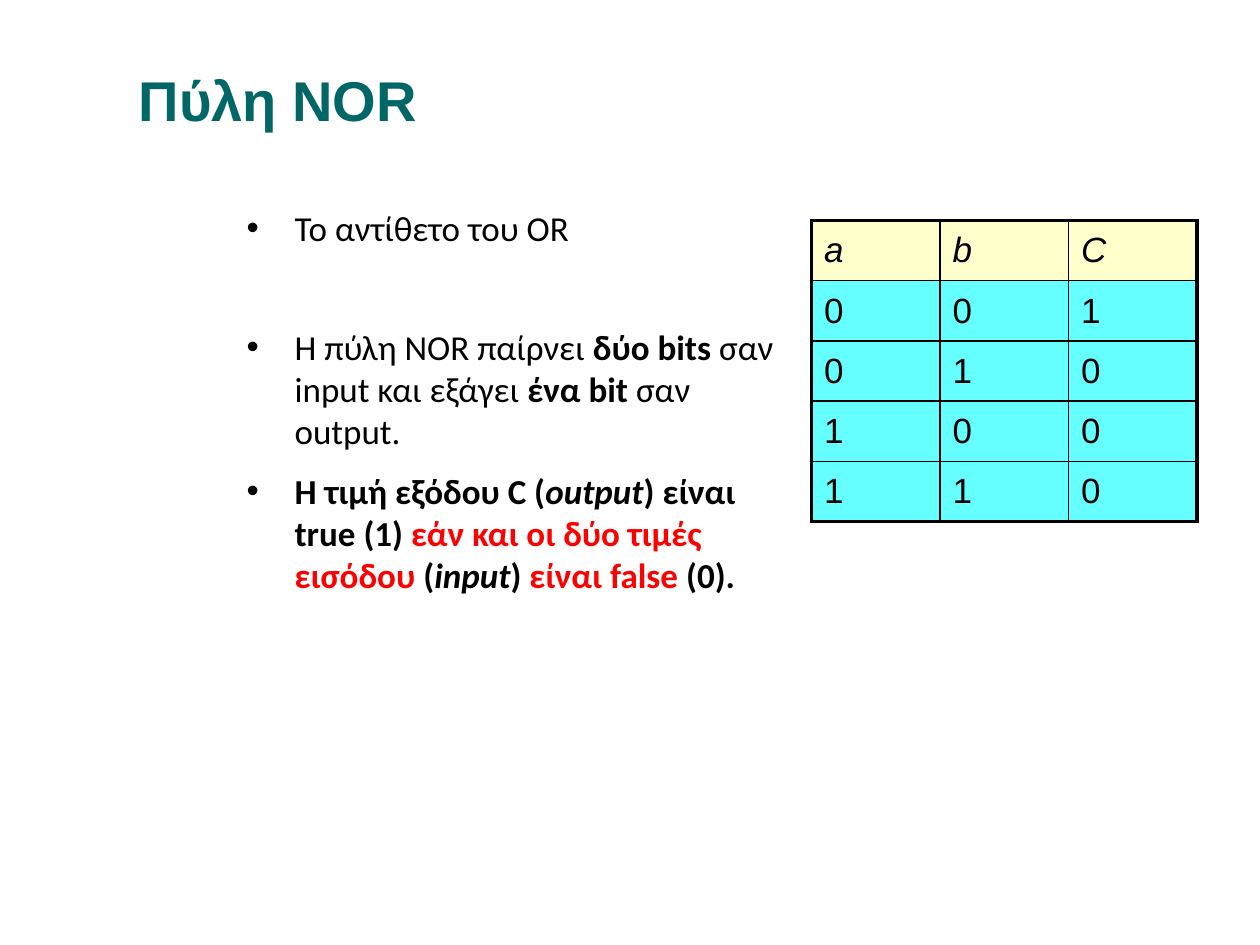
import pptx
import pptx.dml.color
import pptx.enum.text
import pptx.oxml
import pptx.oxml.ns
import pptx.util
from dataclasses import dataclass
from lxml import etree

Inches = pptx.util.Inches
Pt = pptx.util.Pt
RGBColor = pptx.dml.color.RGBColor
MIDDLE = pptx.enum.text.MSO_ANCHOR.MIDDLE

BLACK = RGBColor(0x00, 0x00, 0x00)
RED = RGBColor(0xFF, 0x00, 0x00)
TEAL = RGBColor(0x00, 0x66, 0x66)
CREAM = RGBColor(0xFF, 0xFF, 0xCC)
CYAN = RGBColor(0x66, 0xFF, 0xFF)

OUTER_LINE = Pt(2.25)
INNER_LINE = Pt(1)


@dataclass(frozen=True)
class Span:
    text: str
    bold: bool = False
    italic: bool = False
    color: RGBColor = BLACK


@dataclass(frozen=True)
class Bullet:
    space_before: float
    spans: tuple[Span, ...]


BULLETS = (
    Bullet(0, (Span("Το αντίθετο του OR"),)),
    Bullet(44, (
        Span("Η πύλη NOR παίρνει "),
        Span("δύο bits", bold=True),
        Span(" σαν input και εξάγει "),
        Span("ένα bit", bold=True),
        Span(" σαν output."),
    )),
    Bullet(10, (
        Span("Η τιμή εξόδου C (", bold=True),
        Span("output", bold=True, italic=True),
        Span(") είναι true (1) ", bold=True),
        Span("εάν και οι δύο τιμές εισόδου ", bold=True, color=RED),
        Span("(", bold=True),
        Span("input", bold=True, italic=True),
        Span(") ", bold=True),
        Span("είναι false", bold=True, color=RED),
        Span(" (0).", bold=True),
    )),
)

HEADINGS = ("a", "b", "C")
TRUTH_ROWS = [(str(a), str(b), str(int(not (a or b)))) for a in (0, 1) for b in (0, 1)]


def add_span(para, span: Span, font_name: str, size: float) -> None:
    run = para.add_run()
    run.text = span.text
    run.font.name = font_name
    run.font.size = Pt(size)
    run.font.bold = span.bold
    run.font.italic = span.italic
    run.font.color.rgb = span.color


def add_bullet(para, bullet: Bullet) -> None:
    properties = para._p.get_or_add_pPr()
    properties.set("marL", str(Inches(0.38)))
    properties.set("indent", str(-Inches(0.38)))
    para.space_before = Pt(bullet.space_before)
    etree.SubElement(properties, pptx.oxml.ns.qn("a:buFont")).set("typeface", "Arial")
    etree.SubElement(properties, pptx.oxml.ns.qn("a:buChar")).set("char", "•")
    for span in bullet.spans:
        add_span(para, span, "Calibri", 20)


def set_borders(cell, widths: dict[str, int]) -> None:
    """Draw the cell's sides; border elements must come before the fill."""
    properties = cell._tc.get_or_add_tcPr()
    for position, (side, width) in enumerate(widths.items()):
        line = pptx.oxml.parse_xml(
            f'<a:ln{side} {pptx.oxml.ns.nsdecls("a")} w="{width}">'
            f'<a:solidFill><a:srgbClr val="{BLACK}"/></a:solidFill></a:ln{side}>'
        )
        properties.insert(position, line)


def add_truth_table(page) -> None:
    rows = [HEADINGS, *TRUTH_ROWS]
    last_row, last_column = len(rows) - 1, len(HEADINGS) - 1
    frame = page.shapes.add_table(
        len(rows), len(HEADINGS), Inches(6.44), Inches(1.75), Inches(3.06), Inches(2.39)
    )
    table = frame.table
    for row_index, values in enumerate(rows):
        is_heading = row_index == 0
        for column_index, value in enumerate(values):
            cell = table.cell(row_index, column_index)
            cell.vertical_anchor = MIDDLE
            cell.fill.solid()
            cell.fill.fore_color.rgb = CREAM if is_heading else CYAN
            add_span(cell.text_frame.paragraphs[0], Span(value, italic=is_heading), "Arial", 20)
            on_edge = {
                "L": column_index == 0,
                "R": column_index == last_column,
                "T": is_heading,
                "B": row_index == last_row,
            }
            set_borders(cell, {s: OUTER_LINE if edge else INNER_LINE for s, edge in on_edge.items()})


def add_title(page) -> None:
    title = page.shapes.title
    title.left, title.top = Inches(1), Inches(0.16)
    title.width, title.height = Inches(8.5), Inches(1.25)
    title.text_frame.vertical_anchor = MIDDLE
    para = title.text_frame.paragraphs[0]
    para.alignment = pptx.enum.text.PP_ALIGN.LEFT
    add_span(para, Span("Πύλη NOR", bold=True, color=TEAL), "Arial", 32)


def add_description(page) -> None:
    box = page.shapes.add_textbox(Inches(1.86), Inches(1.59), Inches(4.42), Inches(4.95))
    text = box.text_frame
    text.word_wrap = True
    for index, bullet in enumerate(BULLETS):
        add_bullet(text.add_paragraph() if index else text.paragraphs[0], bullet)


def main() -> None:
    deck = pptx.Presentation()
    deck.slide_width, deck.slide_height = Inches(10), Inches(7.5)
    page = deck.slides.add_slide(deck.slide_layouts[5])  # title only
    add_title(page)
    add_description(page)
    add_truth_table(page)
    deck.save("out.pptx")


if __name__ == "__main__":
    main()
